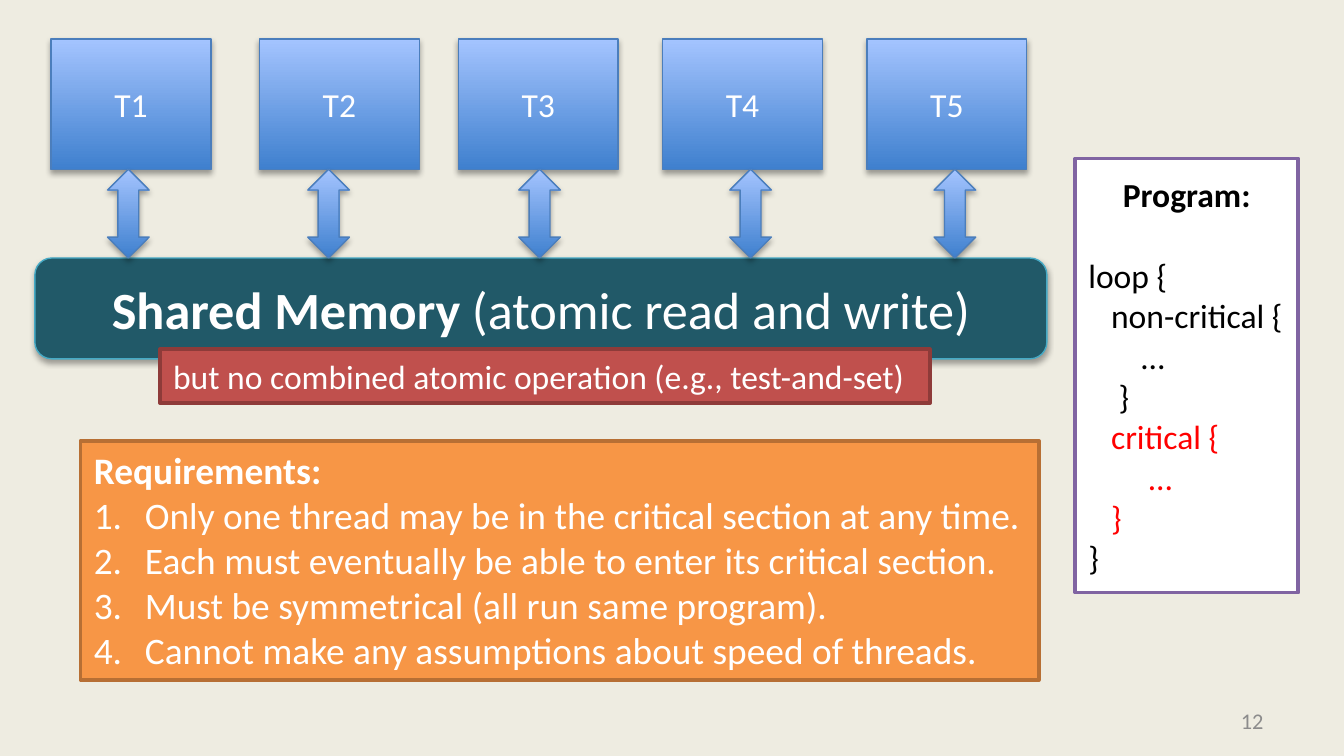
from dataclasses import dataclass

from lxml.etree import SubElement
from pptx import Presentation
from pptx.dml.color import RGBColor
from pptx.enum.shapes import MSO_SHAPE
from pptx.enum.text import MSO_ANCHOR, MSO_AUTO_SIZE, PP_ALIGN
from pptx.oxml.ns import qn
from pptx.util import Inches, Pt

FONT = "Calibri"
BEIGE = RGBColor(0xEE, 0xEC, 0xE1)
GRAY = RGBColor(0x8C, 0x8C, 0x8C)
WHITE = RGBColor(0xFF, 0xFF, 0xFF)
BLACK = RGBColor(0x00, 0x00, 0x00)
CODE_RED = RGBColor(0xFF, 0x00, 0x00)
BLUE_DARK = RGBColor(0x3F, 0x80, 0xCE)
BLUE_LIGHT = RGBColor(0xA4, 0xC4, 0xFF)
BLUE_LINE = RGBColor(0x4B, 0x7E, 0xBC)
TEAL = RGBColor(0x21, 0x59, 0x68)
TEAL_LINE = RGBColor(0x46, 0xAA, 0xC5)
PURPLE = RGBColor(0x80, 0x64, 0xA2)
ORANGE = RGBColor(0xF7, 0x96, 0x46)
ORANGE_LINE = RGBColor(0xB7, 0x6F, 0x34)
RED = RGBColor(0xC0, 0x50, 0x4D)
RED_LINE = RGBColor(0x8E, 0x3B, 0x39)

BOX_TOP, BOX_WIDTH, BOX_HEIGHT = 0.29, 1.19, 0.97
ARROW_TOP, ARROW_WIDTH, ARROW_HEIGHT = 1.26, 0.31, 0.66


@dataclass(frozen=True)
class Thread:
    name: str
    box_left: float
    arrow_left: float


@dataclass(frozen=True)
class Line:
    text: str
    bold: bool = False
    color: RGBColor = WHITE
    align: PP_ALIGN = PP_ALIGN.LEFT
    numbered: bool = False
    space_after: float = 0


THREADS = [
    Thread("T1", 0.38, 0.8),
    Thread("T2", 1.93, 2.29),
    Thread("T3", 3.41, 3.86),
    Thread("T4", 4.93, 5.43),
    Thread("T5", 6.45, 6.95),
]

PROGRAM = [
    Line("Program:", True, BLACK, PP_ALIGN.CENTER, space_after=22),
    Line("loop {", color=BLACK),
    Line("   non-critical {", color=BLACK),
    Line("       …", color=BLACK),
    Line("    }", color=BLACK),
    Line("   critical {", color=CODE_RED),
    Line("        …", color=CODE_RED),
    Line("   }", color=CODE_RED),
    Line("}", color=BLACK),
]

REQUIREMENTS = [
    Line("Requirements:", bold=True),
    Line("Only one thread may be in the critical section at any time.", numbered=True),
    Line("Each must eventually be able to enter its critical section.", numbered=True),
    Line("Must be symmetrical (all run same program).", numbered=True),
    Line("Cannot make any assumptions about speed of threads.", numbered=True),
]


def add_shape(slide, kind: MSO_SHAPE, left: float, top: float, width: float,
              height: float, line_color: RGBColor, line_width: float,
              fill_color: RGBColor | None = None):
    shape = slide.shapes.add_shape(
        kind, Inches(left), Inches(top), Inches(width), Inches(height))
    if fill_color is None:
        shape.fill.gradient()
        shape.fill.gradient_angle = 90
        for stop, color in zip(shape.fill.gradient_stops, (BLUE_DARK, BLUE_LIGHT)):
            stop.color.rgb = color
    else:
        shape.fill.solid()
        shape.fill.fore_color.rgb = fill_color
    shape.line.color.rgb = line_color
    shape.line.width = Pt(line_width)
    shape.shadow.inherit = False
    return shape


def add_shadow(shape) -> None:
    effects = shape._element.spPr.find(qn("a:effectLst"))
    shadow = SubElement(effects, qn("a:outerShdw"), blurRad=str(Pt(3.1)),
                        dist=str(Pt(1.8)), dir="5400000", rotWithShape="0")
    color = SubElement(shadow, qn("a:srgbClr"), val="000000")
    SubElement(color, qn("a:alpha"), val="35000")


def format_run(run, size: float, color: RGBColor, bold: bool = False) -> None:
    run.font.name = FONT
    run.font.size = Pt(size)
    run.font.bold = bold
    run.font.color.rgb = color


def number_paragraph(paragraph) -> None:
    properties = paragraph._p.get_or_add_pPr()
    properties.set("marL", str(Inches(0.38)))
    properties.set("indent", str(-Inches(0.38)))
    SubElement(properties, qn("a:buFont"), typeface="+mj-lt")
    SubElement(properties, qn("a:buAutoNum"), type="arabicPeriod")


def write_lines(shape, lines: list[Line], size: float) -> None:
    frame = shape.text_frame
    frame.text = "\n".join(line.text for line in lines)
    for paragraph, line in zip(frame.paragraphs, lines):
        paragraph.alignment = line.align
        if line.space_after:
            paragraph.space_after = Pt(line.space_after)
        if line.numbered:
            number_paragraph(paragraph)
        format_run(paragraph.runs[0], size, line.color, line.bold)


def fit_to_text(shape) -> None:
    frame = shape.text_frame
    frame.word_wrap = False
    frame.auto_size = MSO_AUTO_SIZE.SHAPE_TO_FIT_TEXT
    frame.vertical_anchor = MSO_ANCHOR.TOP


def add_thread_box(slide, thread: Thread) -> None:
    box = add_shape(slide, MSO_SHAPE.RECTANGLE, thread.box_left, BOX_TOP,
                    BOX_WIDTH, BOX_HEIGHT, BLUE_LINE, 0.75)
    add_shadow(box)
    write_lines(box, [Line(thread.name, align=PP_ALIGN.CENTER)], 18)


def add_thread_arrow(slide, thread: Thread) -> None:
    arrow = add_shape(slide, MSO_SHAPE.UP_DOWN_ARROW, thread.arrow_left, ARROW_TOP,
                      ARROW_WIDTH, ARROW_HEIGHT, BLUE_LINE, 0.75)
    add_shadow(arrow)


def add_shared_memory(slide) -> None:
    memory = add_shape(slide, MSO_SHAPE.ROUNDED_RECTANGLE, 0.26, 1.92, 7.53, 0.75,
                       TEAL_LINE, 0.75, TEAL)
    add_shadow(memory)
    write_lines(memory, [Line("Shared Memory ", True, align=PP_ALIGN.CENTER)], 28)
    run = memory.text_frame.paragraphs[0].add_run()
    run.text = "(atomic read and write)"
    format_run(run, 28, WHITE)


def add_slide_number(slide) -> None:
    number = slide.shapes.add_textbox(
        Inches(7.17), Inches(5.21), Inches(2.33), Inches(0.3))
    number.text_frame.word_wrap = True
    number.text_frame.vertical_anchor = MSO_ANCHOR.MIDDLE
    write_lines(number, [Line("12", color=GRAY, align=PP_ALIGN.RIGHT)], 12)


def main() -> None:
    presentation = Presentation()
    presentation.slide_width = Inches(10)
    presentation.slide_height = Inches(10 * 9 / 16)
    slide = presentation.slides.add_slide(presentation.slide_layouts[6])
    slide.background.fill.solid()
    slide.background.fill.fore_color.rgb = BEIGE

    add_slide_number(slide)
    for thread in THREADS:
        add_thread_box(slide, thread)
    add_shared_memory(slide)
    for thread in THREADS:
        add_thread_arrow(slide, thread)

    program = add_shape(slide, MSO_SHAPE.RECTANGLE, 8, 1.18, 1.66, 3.23,
                        PURPLE, 2, WHITE)
    write_lines(program, PROGRAM, 18)
    requirements = add_shape(slide, MSO_SHAPE.RECTANGLE, 0.6, 3.28, 7.13, 1.78,
                             ORANGE_LINE, 2, ORANGE)
    write_lines(requirements, REQUIREMENTS, 20)
    fit_to_text(requirements)
    limitation = add_shape(slide, MSO_SHAPE.RECTANGLE, 1.19, 2.6, 5.73, 0.4,
                           RED_LINE, 2, RED)
    write_lines(limitation, [Line("but no combined atomic operation (e.g., test-and-set)")], 18)
    fit_to_text(limitation)

    presentation.save("out.pptx")


if __name__ == "__main__":
    main()
